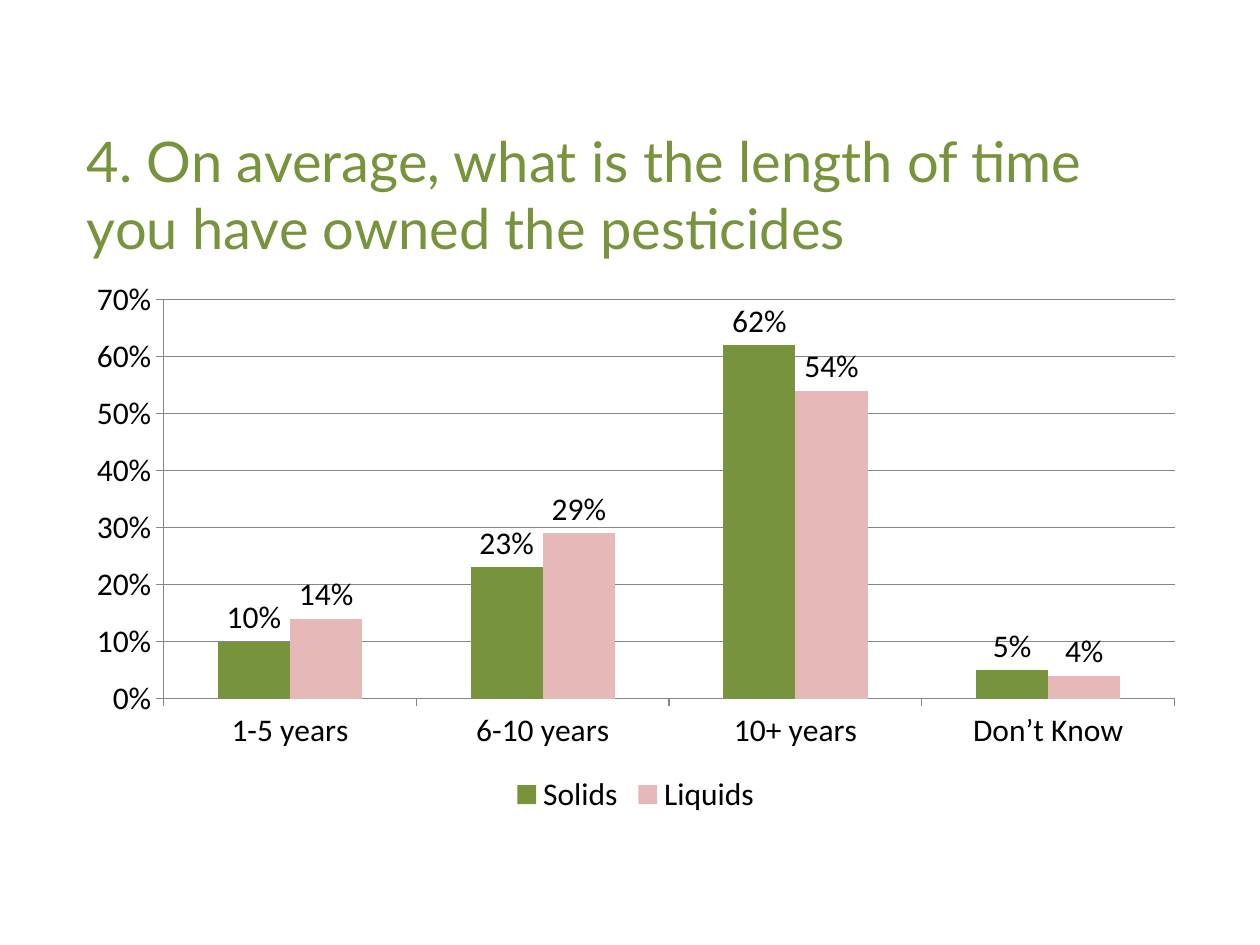
from pptx import Presentation
from pptx.chart.data import CategoryChartData
from pptx.dml.color import RGBColor
from pptx.enum.chart import XL_CHART_TYPE as ChartType
from pptx.enum.chart import XL_LABEL_POSITION as LabelPosition
from pptx.enum.chart import XL_LEGEND_POSITION as LegendPosition
from pptx.enum.chart import XL_TICK_MARK as TickMark
from pptx.enum.text import MSO_ANCHOR as Anchor
from pptx.enum.text import PP_ALIGN as Align
from pptx.util import Pt

GREEN = RGBColor(0x77, 0x93, 0x3C)
PINK = RGBColor(0xE6, 0xB9, 0xB8)
BLACK = RGBColor(0, 0, 0)
GRAY = RGBColor(0x86, 0x86, 0x86)

QUESTION = "4. On average, what is the length of time you have owned the pesticides"
OWNERSHIP = ["1-5 years", "6-10 years", "10+ years", "Don’t Know"]
ANSWERS = [
    ("Solids", GREEN, [0.10, 0.23, 0.62, 0.05]),
    ("Liquids", PINK, [0.14, 0.29, 0.54, 0.04]),
]
LEFT, WIDTH = Pt(42.5), Pt(641.5)


def set_font(font, size, color=BLACK, name="Calibri"):
    font.size = Pt(size)
    font.name = name
    font.color.rgb = color


def add_question(slide):
    question = slide.shapes.title
    question.left, question.top = LEFT, Pt(77)
    question.width, question.height = WIDTH, Pt(67.7)
    frame = question.text_frame
    frame.word_wrap = True
    frame.vertical_anchor = Anchor.MIDDLE
    paragraph = frame.paragraphs[0]
    paragraph.alignment = Align.LEFT
    run = paragraph.add_run()
    run.text = QUESTION
    set_font(run.font, 32, GREEN, "Lato")


def add_answers(slide):
    data = CategoryChartData(number_format="0%")
    data.categories = OWNERSHIP
    for name, _, shares in ANSWERS:
        data.add_series(name, shares)
    chart = slide.shapes.add_chart(
        ChartType.COLUMN_CLUSTERED, LEFT, Pt(154), WIDTH, Pt(314.6), data
    ).chart
    set_font(chart.font, 10)
    chart.has_title = False
    chart.has_legend = True
    chart.legend.position = LegendPosition.BOTTOM
    chart.legend.include_in_layout = False
    set_font(chart.legend.font, 18)

    years, share = chart.category_axis, chart.value_axis
    for axis in (years, share):
        axis.major_tick_mark = TickMark.OUTSIDE
        axis.minor_tick_mark = TickMark.NONE
        axis.format.line.color.rgb = GRAY
        axis.format.line.width = Pt(0.75)
        set_font(axis.tick_labels.font, 18)
    share.minimum_scale, share.maximum_scale, share.major_unit = 0, 0.7, 0.1
    share.tick_labels.number_format = "0%"
    share.tick_labels.number_format_is_linked = False
    share.has_major_gridlines = True
    share.major_gridlines.format.line.color.rgb = GRAY
    share.major_gridlines.format.line.width = Pt(0.75)

    columns = chart.plots[0]
    columns.gap_width = 150
    columns.overlap = 0
    columns.vary_by_categories = False
    for series, (_, color, _) in zip(columns.series, ANSWERS):
        series.format.fill.solid()
        series.format.fill.fore_color.rgb = color
        series.invert_if_negative = False
        labels = series.data_labels
        labels.show_value = True
        labels.position = LabelPosition.OUTSIDE_END
        labels.number_format = "0%"
        labels.number_format_is_linked = False
        set_font(labels.font, 18)


def main():
    deck = Presentation()
    deck.slide_width, deck.slide_height = Pt(720), Pt(540)
    slide = deck.slides.add_slide(deck.slide_layouts[5])
    add_question(slide)
    add_answers(slide)
    deck.save("out.pptx")


if __name__ == "__main__":
    main()
